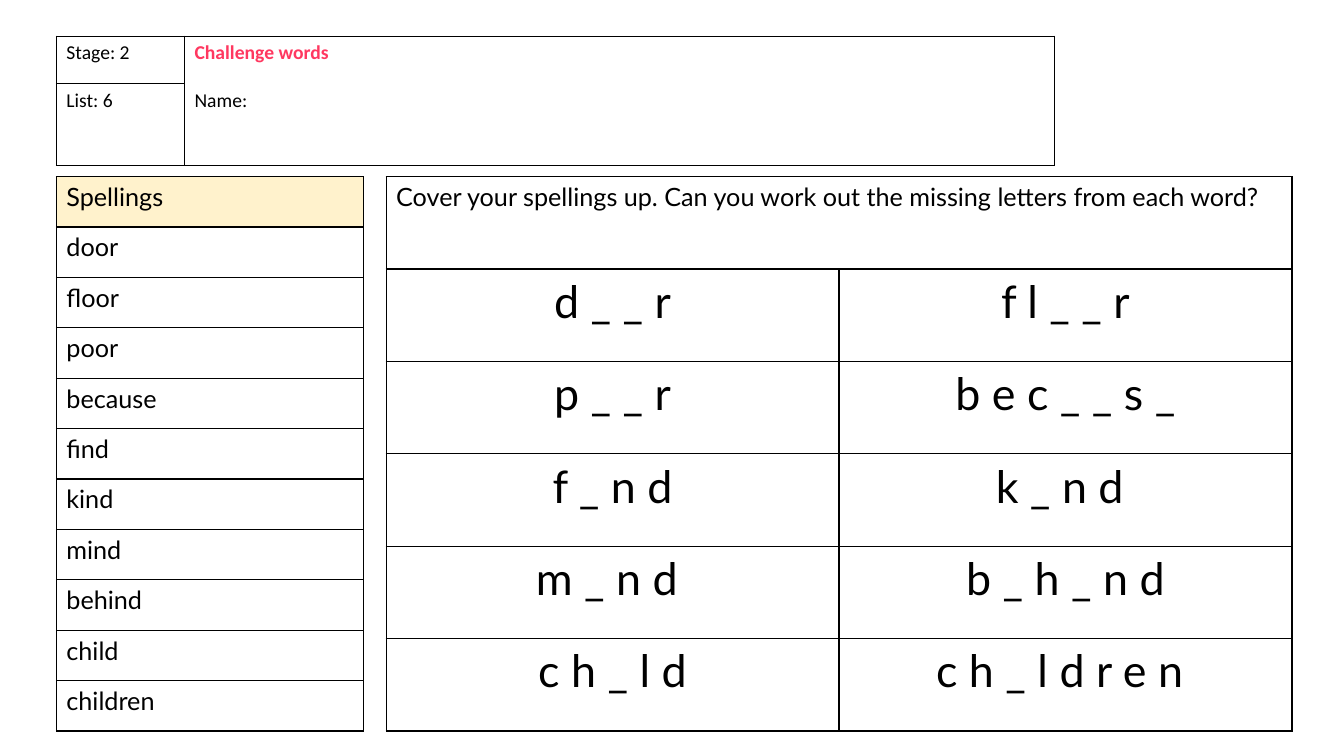
from lxml import etree
from pptx import Presentation
from pptx.dml.color import RGBColor
from pptx.enum import text
from pptx.oxml import ns
from pptx.util import Cm, Pt

# Content
SPELLINGS = ["Spellings", "door", "floor", "poor", "because", "find", "kind",
             "mind", "behind", "child", "children"]
HEADER = [["Stage: 2", "Challenge words\nName:"], ["List: 6", ""]]
PUZZLES = [
    ["Cover your spellings up. Can you work out the missing letters from each word?", ""],
    ["d _ _ r", "f l _ _ r"],
    ["p _ _ r", "b e c _ _ s _"],
    ["f _ n d", "k _ n d "],
    ["m _ n d ", "b _ h _ n d"],
    ["c h _ l d", "c h _ l d r e n "],
]
COLORS = {"ink": "000000", "title": "FF3860", "heading": "FFF2CC"}

# Text formats
SMALL = {"name": "Calibri", "size": Pt(14), "bold": False}
BODY = {"name": "Lato", "size": Pt(18), "bold": False}
LARGE = {**BODY, "size": Pt(32)}

# Layout in cm
LEFT, TOP, LIST_TOP = 1.42, 0.91, 4.45
LIST_WIDTH, LIST_HEIGHT = 7.75, 13.97
PUZZLE_LEFT, PUZZLE_WIDTH = 9.73, 22.83


def style_text(paragraph, style, color="ink"):
    for name, value in style.items():
        setattr(paragraph.font, name, value)
    paragraph.font.color.rgb = RGBColor.from_string(COLORS[color])


def add_borders(cell):
    for side in "LRTB":
        line = etree.SubElement(cell._tc.get_or_add_tcPr(), ns.qn(f"a:ln{side}"), w=str(Pt(1)))
        fill = etree.SubElement(line, ns.qn("a:solidFill"))
        etree.SubElement(fill, ns.qn("a:srgbClr"), val=COLORS["ink"])


def add_grid(slide, left, top, widths, heights, rows, style):
    grid = slide.shapes.add_table(len(rows), len(widths), Cm(left), Cm(top),
                                  Cm(sum(widths)), Cm(sum(heights))).table
    grid.first_row = grid.horz_banding = False
    for column, width in zip(grid.columns, widths):
        column.width = Cm(width)
    for row, height, words in zip(grid.rows, heights, rows):
        row.height = Cm(height)
        for cell, word in zip(row.cells, words):
            add_borders(cell)
            cell.fill.background()
            cell.text = word
            for paragraph in cell.text_frame.paragraphs:
                style_text(paragraph, style)
    return grid


deck = Presentation()
deck.slide_width, deck.slide_height = Cm(33.87), Cm(19.05)
slide = deck.slides.add_slide(deck.slide_layouts[6])

# Spelling list
count = len(SPELLINGS)
spelling_list = add_grid(slide, LEFT, LIST_TOP, [LIST_WIDTH], [LIST_HEIGHT / count] * count,
                         [[word] for word in SPELLINGS], BODY)
heading = spelling_list.cell(0, 0)
heading.fill.solid()
heading.fill.fore_color.rgb = RGBColor.from_string(COLORS["heading"])

# Stage, list and name
header = add_grid(slide, LEFT, TOP, [3.23, 21.92], [1.2, 2.06], HEADER, SMALL)
header.cell(0, 1).merge(header.cell(1, 1))
title, pupil = header.cell(0, 1).text_frame.paragraphs
style_text(title, {"bold": True}, "title")
pupil.space_before = Pt(17)

# Missing letters
count = len(PUZZLES)
puzzles = add_grid(slide, PUZZLE_LEFT, LIST_TOP, [PUZZLE_WIDTH / 2] * 2,
                   [LIST_HEIGHT / count] * count, PUZZLES, LARGE)
puzzles.cell(0, 0).merge(puzzles.cell(0, 1))
for cell in puzzles.iter_cells():
    cell.text_frame.paragraphs[0].alignment = text.PP_ALIGN.CENTER
instruction = puzzles.cell(0, 0).text_frame.paragraphs[0]
instruction.alignment = text.PP_ALIGN.LEFT
style_text(instruction, BODY)

deck.save("out.pptx")
